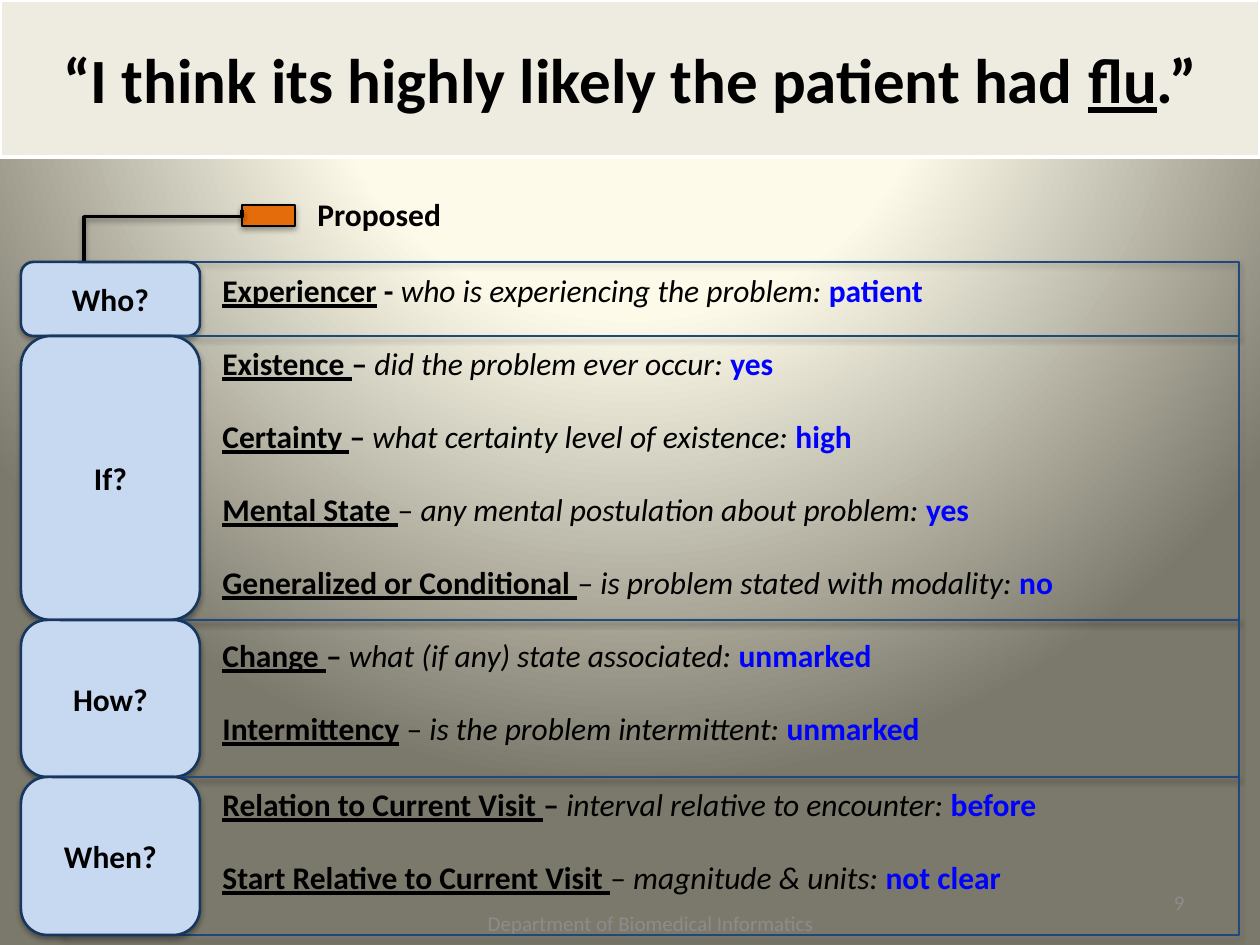
import pptx
import pptx.util
import pptx.dml.color
import pptx.enum.shapes
import pptx.enum.text
import pptx.oxml
import pptx.oxml.ns

RGB = pptx.dml.color.RGBColor
BLACK = RGB(0, 0, 0)
WHITE = RGB(255, 255, 255)
CREAM = RGB(0xEE, 0xEC, 0xE1)
ORANGE = RGB(0xE4, 0x6C, 0x0A)
PALE = RGB(0xC6, 0xD9, 0xF1)
NAVY = RGB(0x17, 0x37, 0x5E)
STEEL = RGB(0x1F, 0x49, 0x7D)
BLUE = RGB(0, 0, 255)
GREY = RGB(0x8C, 0x8C, 0x8C)
KIND = pptx.enum.shapes.MSO_SHAPE
LEFT = pptx.enum.text.PP_ALIGN.LEFT
MID = pptx.enum.text.PP_ALIGN.CENTER
RIGHT = pptx.enum.text.PP_ALIGN.RIGHT
CENTRE = pptx.enum.text.MSO_ANCHOR.MIDDLE
NS = pptx.oxml.ns.nsdecls("a")
qn = pptx.oxml.ns.qn
PX = 914400 / 126
PITCH = 73


def write(frame, text, size=18, bold=True, italic=False, under=False,
          color=BLACK, align=LEFT):
    para = frame.paragraphs[0]
    para.alignment = align
    run = para.add_run()
    run.text = text
    font = run.font
    font.name = "Calibri"
    font.size = pptx.util.Pt(size)
    font.bold, font.italic, font.underline = bold, italic, under
    font.color.rgb = color


def style(item, line, width, fill=None, alpha=35):
    item.line.color.rgb = line
    item.line.width = pptx.util.Pt(width)
    if fill is not None:
        item.fill.solid()
        item.fill.fore_color.rgb = fill
    elif hasattr(item, "fill"):
        item.fill.background()
    item.element.spPr.append(pptx.oxml.parse_xml(
        f'<a:effectLst {NS}><a:outerShdw blurRad="40000" dist="23000" dir="5400000" '
        f'rotWithShape="0"><a:srgbClr val="000000"><a:alpha val="{alpha}000"/>'
        '</a:srgbClr></a:outerShdw></a:effectLst>'))


deck = pptx.Presentation()
deck.slide_width, deck.slide_height = [round(n * PX) for n in (1260, 945)]
slide = deck.slides.add_slide(deck.slide_layouts[5])
shapes = slide.shapes

slide.background.fill.solid()
back = slide.element.find(".//" + qn("p:bgPr"))
stops = "".join(
    f'<a:gs pos="{pos}000"><a:srgbClr val="{tone}"/></a:gs>'
    for pos, tone in ((0, "FEFCEE"), (40, "FDFAEA"), (100, "7B796B")))
back.replace(back[0], pptx.oxml.parse_xml(
    f'<a:gradFill {NS} rotWithShape="1"><a:gsLst>{stops}</a:gsLst><a:path path="circle">'
    '<a:fillToRect l="50000" t="-80000" r="50000" b="180000"/></a:path></a:gradFill>'))

title = shapes.title
title.left, title.top, title.width, title.height = [
    round(n * PX) for n in (0, 0, 1260, 157)]
title.fill.solid()
title.fill.fore_color.rgb = CREAM
title.line.color.rgb = WHITE
title.line.width = pptx.util.Pt(2)
title.text_frame.vertical_anchor = CENTRE
for text, under in (("“I think its highly likely the patient had ", False),
                    ("flu", True), (".”", False)):
    write(title.text_frame, text, size=36, under=under, align=MID)

key = shapes.add_shape(KIND.RECTANGLE, *[round(n * PX) for n in (242, 205, 53, 21)])
style(key, BLACK, 0.75, ORANGE)

link = shapes.add_connector(pptx.enum.shapes.MSO_CONNECTOR.ELBOW,
                            *[round(n * PX) for n in (-173, 467, 499, 625)])
link.element.spPr.find(qn("a:xfrm")).set("rot", "5400000")
geom = link.element.spPr.find(qn("a:prstGeom"))
geom.replace(geom[0], pptx.oxml.parse_xml(
    f'<a:avLst {NS}><a:gd name="adj1" fmla="val 1000"/></a:avLst>'))
style(link, BLACK, 2, alpha=38)

notes = (
    ("Proposed", (305, 189, 725, 50), {}),
    ("Department of Biomedical Informatics", (451, 898, 399, 50),
     dict(size=12, bold=False, color=GREY, align=MID)),
    ("9", (903, 877, 294, 50), dict(size=12, bold=False, color=GREY, align=RIGHT)),
)
for text, box, form in notes:
    frame = shapes.add_textbox(*[round(n * PX) for n in box]).text_frame
    frame.word_wrap = True
    frame.vertical_anchor = CENTRE
    write(frame, text, **form)

groups = (
    ("Who?", 262, 336, 265, (
        ("Experiencer", " - ", True, "who is experiencing the problem: ", "patient"),)),
    ("If?", 336, 620, 338, (
        ("Existence ", "– ", True, "did the problem ever occur: ", "yes"),
        ("Certainty ", "– ", True, "what certainty level of existence: ", "high"),
        ("Mental State ", "– ", False, "any mental postulation about problem: ", "yes"),
        ("Generalized or Conditional ", "– ", False,
         "is problem stated with modality: ", "no"))),
    ("How?", 620, 777, 630, (
        ("Change ", "– ", True, "what (if any) state associated: ", "unmarked"),
        ("Intermittency", " – ", False, "is the problem intermittent: ", "unmarked"))),
    ("When?", 777, 935, 779, (
        ("Relation to Current Visit ", "– ", True,
         "interval relative to encounter: ", "before"),
        ("Start Relative to Current Visit ", "– ", False,
         "magnitude & units: ", "not clear"))),
)
for name, top, end, first, rows in groups:
    for step, (term, dash, heavy, query, value) in enumerate(rows):
        box = (210, first + step * PITCH, 1050, 50)
        frame = shapes.add_textbox(*[round(n * PX) for n in box]).text_frame
        frame.word_wrap = True
        write(frame, term, under=True)
        write(frame, dash, bold=heavy)
        write(frame, query, bold=False, italic=True)
        write(frame, value, color=BLUE)

    band = shapes.add_shape(
        KIND.RECTANGLE, *[round(n * PX) for n in (63, top, 1176, end - top)])
    style(band, STEEL, 0.75)
    tab = shapes.add_shape(
        KIND.ROUNDED_RECTANGLE, *[round(n * PX) for n in (21, top, 179, end - top)])
    style(tab, NAVY, 1.5, PALE)
    tab.text_frame.vertical_anchor = CENTRE
    write(tab.text_frame, name, align=MID)

deck.save("out.pptx")
